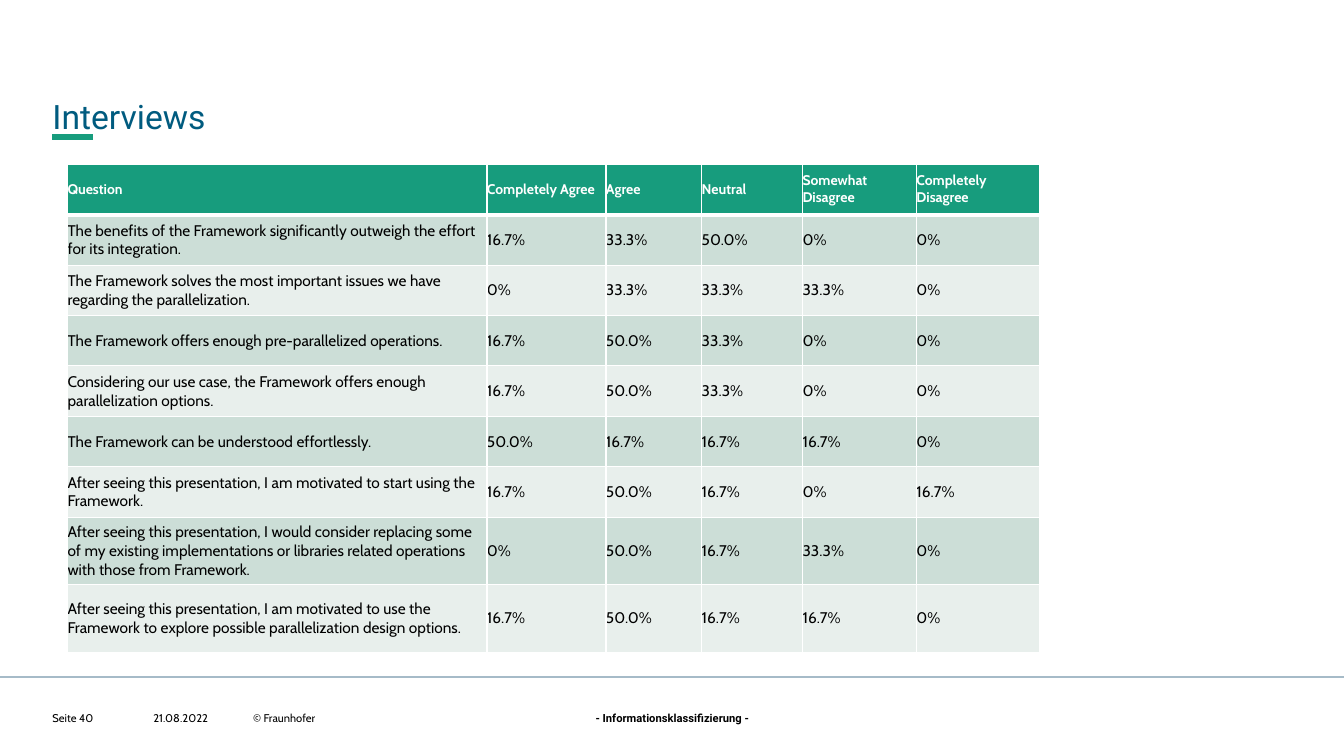
from dataclasses import dataclass

from lxml.etree import SubElement
from pptx import Presentation
from pptx.dml.color import RGBColor
from pptx.enum.shapes import MSO_CONNECTOR
from pptx.enum.text import MSO_ANCHOR, PP_ALIGN
from pptx.oxml import parse_xml
from pptx.oxml.ns import nsdecls, qn
from pptx.slide import Slide
from pptx.table import _Cell
from pptx.text.text import TextFrame
from pptx.util import Emu, Pt

PX = 9144  # 100 px to the inch

GREEN = RGBColor(0x17, 0x9C, 0x7D)
BLUE = RGBColor(0x00, 0x5B, 0x7F)
GREY = RGBColor(0xA6, 0xBB, 0xC8)
BAND_DARK = RGBColor(0xCC, 0xDE, 0xD7)
BAND_LIGHT = RGBColor(0xE8, 0xEF, 0xEC)
WHITE = RGBColor(0xFF, 0xFF, 0xFF)
BLACK = RGBColor(0x00, 0x00, 0x00)

BODY_FONT = "Cabin"
HEAD_FONT = "Roboto"


@dataclass
class Rule:
    x1: int
    x2: int
    y: int
    color: RGBColor
    weight: float


@dataclass
class FooterText:
    text: str
    x: int
    width: int
    font: str = BODY_FONT
    centered: bool = False


RULES = [Rule(52, 92, 136, GREEN, 4), Rule(0, 1333, 672, GREY, 1.5)]

FOOTER_TOP, FOOTER_HEIGHT = 706, 13
FOOTER = [
    FooterText("Seite 40", 52, 79),
    FooterText("21.08.2022", 152, 79),
    FooterText("© Fraunhofer", 251, 323),
    FooterText("- Informationsklassifizierung -", 588, 158, HEAD_FONT, True),
]

TABLE_LEFT, TABLE_TOP = 67, 163
COL_WIDTHS = [416, 118, 95, 100, 113, 122]
ROW_HEIGHTS = [50] * 7 + [67] * 2
ROWS = [
    ("Question", "Completely Agree", "Agree", "Neutral",
     "Somewhat Disagree", "Completely Disagree"),
    ("The benefits of the Framework significantly outweigh the effort for its integration.",
     "16.7%", "33.3%", "50.0%", "0%", "0%"),
    ("The Framework solves the most important issues we have regarding the parallelization.",
     "0%", "33.3%", "33.3%", "33.3%", "0%"),
    ("The Framework offers enough pre-parallelized operations.",
     "16.7%", "50.0%", "33.3%", "0%", "0%"),
    ("Considering our use case, the Framework offers enough parallelization options.",
     "16.7%", "50.0%", "33.3%", "0%", "0%"),
    ("The Framework can be understood effortlessly.",
     "50.0%", "16.7%", "16.7%", "16.7%", "0%"),
    ("After seeing this presentation, I am motivated to start using the Framework.",
     "16.7%", "50.0%", "16.7%", "0%", "16.7%"),
    ("After seeing this presentation, I would consider replacing some of my existing "
     "implementations or libraries related operations with those from Framework.",
     "0%", "50.0%", "16.7%", "33.3%", "0%"),
    ("After seeing this presentation, I am motivated to use the Framework to explore "
     "possible parallelization design options.",
     "16.7%", "50.0%", "16.7%", "16.7%", "0%"),
]


def px(n: int) -> Emu:
    return Emu(n * PX)


def set_text(tf: TextFrame, text: str, font: str, size: int,
             color: RGBColor, bold: bool = False) -> None:
    tf.text = text
    f = tf.paragraphs[0].font
    f.name, f.size, f.bold = font, Pt(size), bold
    f.color.rgb = color


def clear_margins(box: TextFrame | _Cell) -> None:
    box.margin_left = box.margin_right = box.margin_top = box.margin_bottom = 0


def add_title(s: Slide) -> None:
    title = s.shapes.title
    title.left, title.top, title.width, title.height = map(px, (52, 91, 1228, 42))
    tf = title.text_frame
    clear_margins(tf)
    tf.vertical_anchor = MSO_ANCHOR.TOP
    set_text(tf, "Interviews", HEAD_FONT, 24, BLUE)
    tf.paragraphs[0].alignment = PP_ALIGN.LEFT
    tf.paragraphs[0].line_spacing = 1.1


def add_rule(s: Slide, rule: Rule) -> None:
    line = s.shapes.add_connector(MSO_CONNECTOR.STRAIGHT, px(rule.x1), px(rule.y),
                                  px(rule.x2), px(rule.y))
    line.line.color.rgb = rule.color
    line.line.width = Pt(rule.weight)
    SubElement(line._element.spPr, qn("a:effectLst"))


def add_footer_text(s: Slide, item: FooterText) -> None:
    box = s.shapes.add_textbox(px(item.x), px(FOOTER_TOP), px(item.width), px(FOOTER_HEIGHT))
    tf = box.text_frame
    clear_margins(tf)
    tf.word_wrap = not item.centered
    tf.vertical_anchor = MSO_ANCHOR.TOP if item.centered else MSO_ANCHOR.MIDDLE
    set_text(tf, item.text, item.font, 8, BLACK, bold=item.centered)
    if item.centered:
        tf.paragraphs[0].alignment = PP_ALIGN.CENTER


def set_borders(cell: _Cell, top: int, bottom: int) -> None:
    """Draw white borders, 1 pt at the sides; they must precede the fill."""
    tc_pr = cell._tc.get_or_add_tcPr()
    for i, (side, weight) in enumerate(zip("LRTB", (1, 1, top, bottom))):
        tc_pr.insert(i, parse_xml(
            f'<a:ln{side} {nsdecls("a")} w="{Pt(weight)}"><a:solidFill>'
            f'<a:srgbClr val="{WHITE}"/></a:solidFill></a:ln{side}>'))


def add_survey_table(s: Slide) -> None:
    frame = s.shapes.add_table(len(ROWS), len(COL_WIDTHS), px(TABLE_LEFT), px(TABLE_TOP),
                               px(sum(COL_WIDTHS)), px(sum(ROW_HEIGHTS)))
    table = frame.table
    for column, width in zip(table.columns, COL_WIDTHS):
        column.width = px(width)
    for r, (row, height, texts) in enumerate(zip(table.rows, ROW_HEIGHTS, ROWS)):
        row.height = px(height)
        header = r == 0
        fill = GREEN if header else BAND_DARK if r % 2 else BAND_LIGHT
        for cell, text in zip(row.cells, texts):
            clear_margins(cell)
            cell.vertical_anchor = MSO_ANCHOR.MIDDLE
            set_text(cell.text_frame, text, BODY_FONT, 10 if header else 11,
                     WHITE if header else BLACK, bold=header)
            cell.fill.solid()
            cell.fill.fore_color.rgb = fill
            set_borders(cell, top=3 if r == 1 else 1, bottom=3 if header else 1)


def main() -> None:
    prs = Presentation()
    prs.slide_width, prs.slide_height = px(1333), px(750)
    s = prs.slides.add_slide(prs.slide_layouts.get_by_name("Title Only"))
    add_title(s)
    for rule in RULES:
        add_rule(s, rule)
    for item in FOOTER:
        add_footer_text(s, item)
    add_survey_table(s)
    prs.save("out.pptx")


if __name__ == "__main__":
    main()
